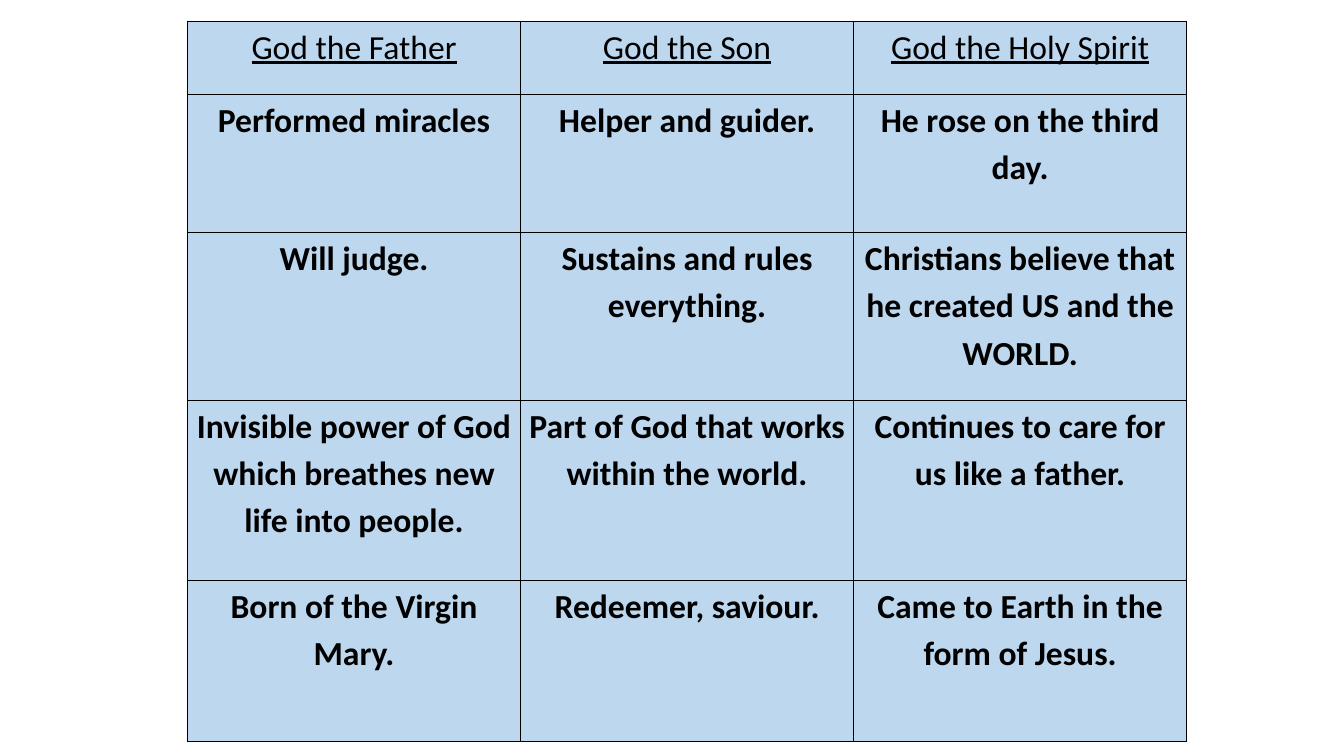
"""Builds a slide with a table on the three persons of the Trinity."""
from dataclasses import dataclass

from lxml.etree import SubElement
from pptx import Presentation
from pptx.dml.color import RGBColor as Rgb
from pptx.enum.text import PP_ALIGN as Align
from pptx.oxml.ns import qn
from pptx.util import Inches, Pt


@dataclass(frozen=True)
class Theme:
    """Colours and type sizes of the slide."""
    font: str = "Calibri"
    size: int = 24
    ink: str = "000000"
    cell: str = "BDD7EE"
    border: float = 1
    spacing: float = 1.15
    side_margin: float = 0.06


PERSONS = ["God the Father", "God the Son", "God the Holy Spirit"]
STATEMENTS = [
    ["Performed miracles", "Helper and guider.", "He rose on the third day."],
    ["Will judge.", "Sustains and rules everything.",
     "Christians believe that he created US and the WORLD."],
    ["Invisible power of God which breathes new life into people.",
     "Part of God that works within the world.",
     "Continues to care for us like a father."],
    ["Born of the Virgin Mary.", "Redeemer, saviour.",
     "Came to Earth in the form of Jesus."],
]
ROW_HEIGHTS = [0.73, 1.37, 1.66, 1.79, 1.6]


def write(frame, text, *, theme, bold=False, underline=False):
    """Put formatted, centred text in a text frame."""
    paragraph = frame.paragraphs[0]
    paragraph.alignment = Align.CENTER
    paragraph.line_spacing = theme.spacing
    run = paragraph.add_run()
    run.text = text
    font = run.font
    font.name, font.size = theme.font, Pt(theme.size)
    font.bold, font.underline = bold, underline
    font.color.rgb = Rgb.from_string(theme.ink)


class SlideBuilder:
    """Holds the theme and the current slide."""

    def __init__(self, slide, theme):
        """Keep the slide and its theme."""
        self.slide = slide
        self.theme = theme

    def style_cell(self, cell):
        """Set the margins, borders and fill of a cell."""
        cell.margin_left = cell.margin_right = Inches(self.theme.side_margin)
        cell.margin_top = cell.margin_bottom = 0
        properties = cell._tc.get_or_add_tcPr()
        for side in ("lnL", "lnR", "lnT", "lnB"):
            line = SubElement(properties, qn(f"a:{side}"), w=str(Pt(self.theme.border)))
            fill = SubElement(line, qn("a:solidFill"))
            SubElement(fill, qn("a:srgbClr"), val=self.theme.ink)
        cell.fill.solid()
        cell.fill.fore_color.rgb = Rgb.from_string(self.theme.cell)

    def table(self, header, body, left, top, width, heights):
        """Add a table with an underlined header and a bold body."""
        rows = [header, *body]
        table = self.slide.shapes.add_table(
            len(rows), len(header), Inches(left), Inches(top),
            Inches(width), Inches(sum(heights))).table
        table.first_row = table.horz_banding = False
        for row, height in zip(table.rows, heights):
            row.height = Inches(height)
        for r, texts in enumerate(rows):
            for c, text in enumerate(texts):
                cell = table.cell(r, c)
                self.style_cell(cell)
                write(cell.text_frame, text, theme=self.theme,
                      bold=r > 0, underline=r == 0)


def main():
    """Build and save the presentation."""
    deck = Presentation()
    deck.slide_width, deck.slide_height = Inches(13.33), Inches(7.5)
    blank_layout = deck.slide_layouts[6]
    builder = SlideBuilder(deck.slides.add_slide(blank_layout), Theme())
    builder.table(PERSONS, STATEMENTS, 1.86, 0.21, 9.91, ROW_HEIGHTS)
    deck.save("out.pptx")


if __name__ == "__main__":
    main()
